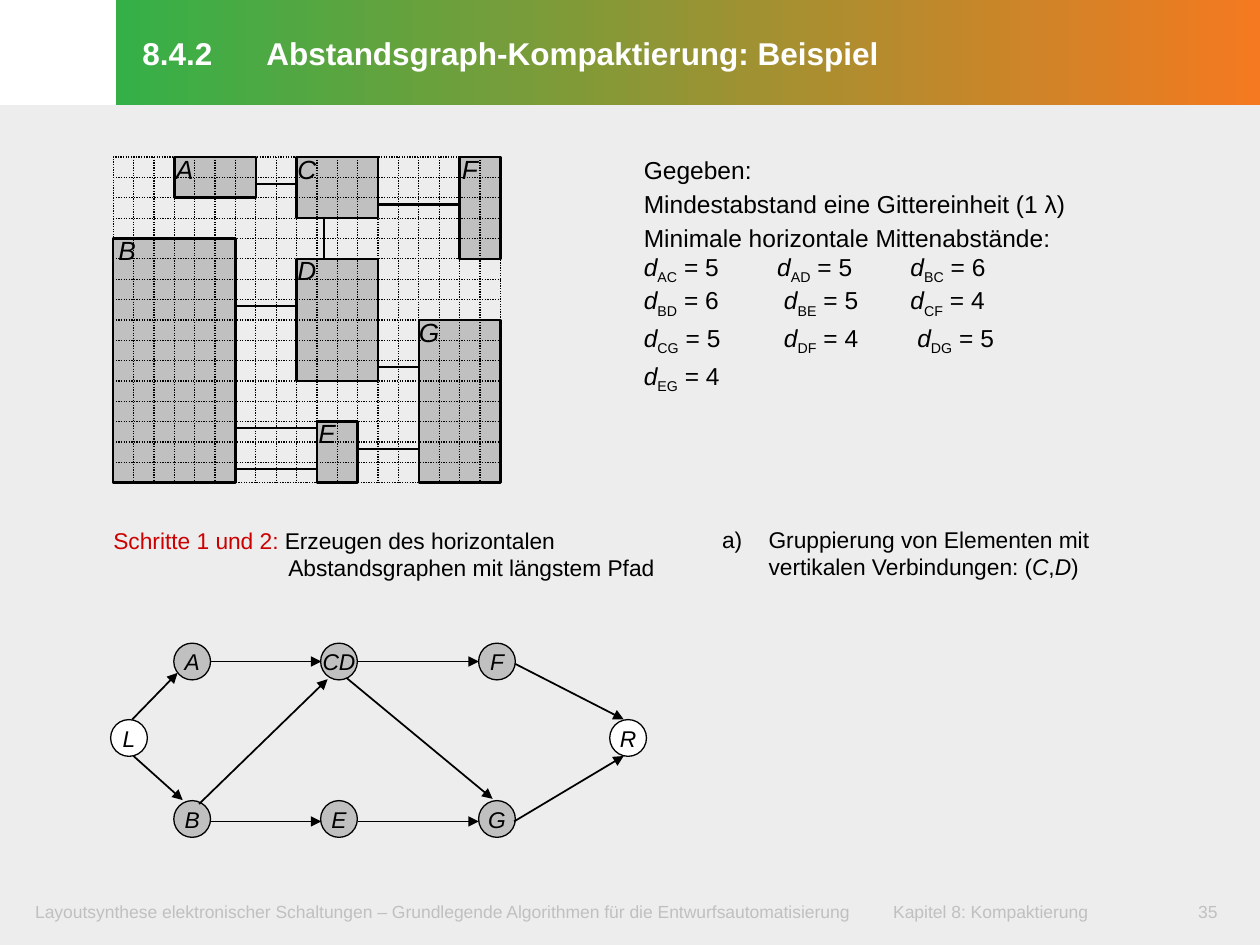
from dataclasses import dataclass

from lxml.etree import SubElement
from pptx import Presentation
from pptx.dml.color import RGBColor
from pptx.enum.dml import MSO_LINE
from pptx.enum.shapes import MSO_CONNECTOR, MSO_SHAPE
from pptx.enum.text import MSO_ANCHOR, PP_ALIGN
from pptx.oxml.ns import qn
from pptx.util import Pt


@dataclass(frozen=True)
class Theme:
    font: str = "Arial"
    black: str = "000000"
    white: str = "FFFFFF"
    red: str = "CC0000"
    gray: str = "C0C0C0"
    page: str = "EDEDED"
    green: str = "35B048"
    orange: str = "F47920"
    title: float = 18
    cell: float = 15
    body: float = 14
    step: float = 13
    footer: float = 10


T = Theme()


def rgb(color):
    return RGBColor.from_string(color)


def add_shape(s, kind, x, y, w, h, fill=None, line=None, dash=None):
    sp = s.shapes.add_shape(kind, Pt(x), Pt(y), Pt(w), Pt(h))
    sp.shadow.inherit = False
    if fill:
        sp.fill.solid()
        sp.fill.fore_color.rgb = rgb(fill)
    else:
        sp.fill.background()
    if line:
        sp.line.color.rgb = rgb(T.black)
        sp.line.width = Pt(line)
        sp.line.dash_style = dash
    else:
        sp.line.fill.background()
    return sp


def add_line(s, start, end, width, dash=None, arrow=False):
    cn = s.shapes.add_connector(MSO_CONNECTOR.STRAIGHT, *map(Pt, (*start, *end)))
    cn.line.color.rgb = rgb(T.black)
    cn.line.width = Pt(width)
    cn.line.dash_style = dash
    if arrow:
        SubElement(cn.line._get_or_add_ln(), qn("a:tailEnd"), type="triangle")
    SubElement(cn._element.spPr, qn("a:effectLst"))


def set_frame(tf, insets=(0, 0, 0, 0), wrap=True, anchor=MSO_ANCHOR.TOP):
    (tf.margin_left, tf.margin_top,
     tf.margin_right, tf.margin_bottom) = map(Pt, insets)
    tf.word_wrap = wrap
    tf.vertical_anchor = anchor
    return tf


def add_box(s, x, y, w, h, **frame):
    return set_frame(s.shapes.add_textbox(Pt(x), Pt(y), Pt(w), Pt(h)).text_frame, **frame)


def set_tabs(p, *stops):
    tabs = SubElement(p._p.get_or_add_pPr(), qn("a:tabLst"))
    for pos in stops:
        SubElement(tabs, qn("a:tab"), pos=str(Pt(pos)), algn="l")


def style(r, size, color=T.black, bold=False, italic=False):
    f = r.font
    f.name, f.size, f.bold, f.italic = T.font, Pt(size), bold, italic
    f.color.rgb = rgb(color)


def set_text(p, text, size, align=PP_ALIGN.LEFT, **look):
    p.text = text
    p.alignment = align
    for r in p.runs:
        style(r, size, **look)


def add_run(p, text, size, **look):
    r = p.add_run()
    r.text = text
    style(r, size, **look)
    return r


def header(s, x, y, w, h):
    sp = add_shape(s, MSO_SHAPE.RECTANGLE, x, y, w, h)
    sp.fill.gradient()
    sp.fill.gradient_angle = 0
    for stop, pos, color in zip(sp.fill.gradient_stops, (0, 1), (T.green, T.orange)):
        stop.position = pos
        stop.color.rgb = rgb(color)
    tf = set_frame(sp.text_frame, (15, 3.6, 7.2, 5), anchor=MSO_ANCHOR.MIDDLE)
    p = tf.paragraphs[0]
    p.line_spacing = Pt(23.5)
    set_tabs(p, 70.9)
    set_text(p, "8.4.2\tAbstandsgraph-Kompaktierung: Beispiel", T.title,
             color=T.white, bold=True)


def footer(s, x, y, w, h):
    insets = (8.6, 4.3, 8.6, 4.3)
    p = add_box(s, x, y, w - 32, h, insets=insets).paragraphs[0]
    set_tabs(p, 490.3)
    set_text(p, "Layoutsynthese elektronischer Schaltungen – Grundlegende Algorithmen "
             "für die Entwurfsautomatisierung\tKapitel 8: Kompaktierung",
             T.footer, color=T.gray)
    p = add_box(s, x + w - 42.5, y, 42.5, h, insets=insets).paragraphs[0]
    set_text(p, "35", T.footer, PP_ALIGN.CENTER, color=T.gray)


def layout_grid(s, x, y, w, h, cols=19, rows=16):
    dx, dy = w / cols, h / rows

    def at(col, row):
        return x + col * dx, y + row * dy

    # Cells: name -> column, row, columns, rows
    cells = {"E": (10, 13, 2, 3), "C": (9, 0, 4, 3), "D": (9, 5, 4, 6), "G": (15, 8, 4, 8),
             "F": (17, 0, 2, 5), "B": (0, 4, 6, 12), "A": (3, 0, 4, 2)}
    for col, row, n, m in cells.values():
        add_shape(s, MSO_SHAPE.RECTANGLE, *at(col, row), n * dx, m * dy, T.gray, 1.5)
    # Wires between cells
    for col, row, end in ((7, 1.33, 9), (13, 2.33, 17), (6, 7.33, 9), (13, 10.33, 15),
                          (6, 13.33, 10), (12, 14.33, 15), (6, 15.33, 10)):
        add_line(s, at(col, row), at(end, row), 1.25)
    add_line(s, at(10.33, 3), at(10.33, 5), 1.25)
    # Cell names
    for name, (col, row, _, _) in cells.items():
        cx, cy = at(col + (0.18 if name == "B" else 0), row - 0.2)
        tf = add_box(s, cx, cy, dx, dy, wrap=False)
        set_text(tf.paragraphs[0], name, T.cell, PP_ALIGN.CENTER, italic=True)
    # Dotted grid
    dot = MSO_LINE.ROUND_DOT
    add_shape(s, MSO_SHAPE.RECTANGLE, x, y, w, h, line=0.75, dash=dot)
    for row in range(1, rows):
        add_line(s, at(0, row), at(cols, row), 0.75, dot)
    for col in range(1, cols):
        add_line(s, at(col, 0), at(col, rows), 0.75, dot)


def givens(s, x, y, w, h):
    tf = add_box(s, x, y, w, h, insets=(7.9, 3.6, 7.9, 3.6))
    lines = ("Gegeben:", "Mindestabstand eine Gittereinheit (1 λ)",
             "Minimale horizontale Mittenabstände:")
    for i, line in enumerate(lines):
        p = tf.paragraphs[0] if i == 0 else tf.add_paragraph()
        p.space_after = Pt(0 if i == 2 else 2.5)
        set_text(p, line, T.body)
    # Distances: tab stops, space after, pairs
    rows = (((76.2, 152.4), 0, (("AC", 5), ("AD", 5), ("BC", 6))),
            ((80.1, 152.4), 2.5, (("BD", 6), ("BE", 5), ("CF", 4))),
            ((80.1, 156.3), 2.5, (("CG", 5), ("DF", 4), ("DG", 5))),
            ((), 0, (("EG", 4),)))
    for stops, after, pairs in rows:
        p = tf.add_paragraph()
        p.space_after = Pt(after)
        set_tabs(p, *stops)
        for i, (pair, value) in enumerate(pairs, 1):
            add_run(p, "d", T.body, italic=True)
            sub = add_run(p, pair, T.body)
            sub._r.get_or_add_rPr().set("baseline", "-25000")
            add_run(p, f" = {value}" + ("\t" if i < len(pairs) else ""), T.body)


def step_text(s, x, y, w, h, hang, first, second):
    p = add_box(s, x, y, w, h).paragraphs[0]
    p.line_spacing = Pt(15.8)
    pPr = p._p.get_or_add_pPr()
    pPr.set("marL", str(Pt(hang)))
    pPr.set("indent", str(Pt(-hang)))
    for text, look in first:
        add_run(p, text, T.step, **look)
    p.add_line_break()
    for text, look in second:
        add_run(p, text, T.step, **look)


def distance_graph(s, x, y, d=21):
    top, mid, low = 11, 54.7, 101
    nodes = {"L": (10.7, mid), "A": (46.8, top), "CD": (130.7, top), "F": (221, top),
             "B": (46.8, low), "E": (130.7, low), "G": (221, low), "R": (295.9, mid)}
    for name, (cx, cy) in nodes.items():
        fill = T.white if name in "LR" else T.gray
        sp = add_shape(s, MSO_SHAPE.OVAL, x + cx - d / 2, y + cy - d / 2, d, d, fill, 0.75)
        tf = set_frame(sp.text_frame, wrap=False, anchor=MSO_ANCHOR.MIDDLE)
        set_text(tf.paragraphs[0], name, T.step, PP_ALIGN.CENTER, italic=True)
    # Horizontal edges, then slanted ones
    edges = [(x1, ey, x2, ey) for ey in (top, 102.4)
             for x1, x2 in ((57.2, 120.6), (141.5, 210.6))]
    edges += [(12.6, 44.1, 38.5, 17.5), (13.3, 65, 41.4, 90.2), (50.8, 92.4, 124.2, 21.1),
              (135, 20.4, 218.5, 89.5), (231.5, 12.4, 293.4, 44.1),
              (230.8, 102.4, 293.4, 65)]
    for x1, y1, x2, y2 in edges:
        add_line(s, (x + x1, y + y1), (x + x2, y + y2), 1, arrow=True)


def main():
    prs = Presentation()
    prs.slide_width, prs.slide_height = Pt(720), Pt(540)
    s = prs.slides.add_slide(prs.slide_layouts[6])
    add_shape(s, MSO_SHAPE.RECTANGLE, 0, 60, 720, 480, T.page)
    footer(s, 11.5, 510.5, 700, 23)
    header(s, 66.3, 0, 653.7, 60)
    layout_grid(s, 64.7, 89.8, 221.2, 186)
    givens(s, 360, 85, 318, 167)
    distance_graph(s, 63, 367)
    step_text(s, 64.8, 300.7, 330, 32, 100,
              [("Schritte 1 und 2:", {"color": T.red}), (" Erzeugen des horizontalen", {})],
              [("Abstandsgraphen mit längstem Pfad", {})])
    italic = {"italic": True}
    step_text(s, 412.6, 300, 240, 32, 26.6,
              [("a)\tGruppierung von Elementen mit", {})],
              [("vertikalen Verbindungen: (", {}), ("C", italic), (",", {}),
               ("D", italic), (")", {})])
    prs.save("out.pptx")


if __name__ == "__main__":
    main()
